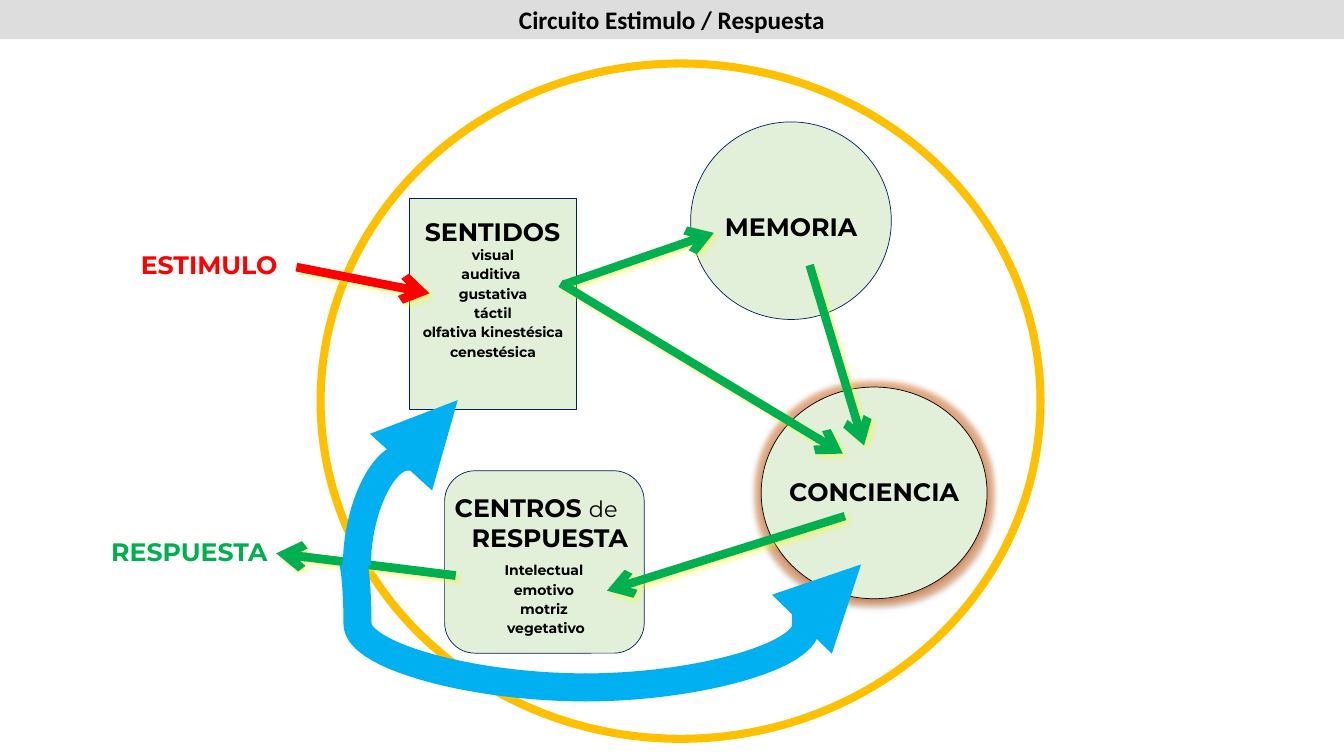
from pptx import Presentation
from pptx.dml.color import RGBColor
from pptx.enum.shapes import MSO_CONNECTOR as Link, MSO_SHAPE as Form
from pptx.enum.text import MSO_ANCHOR as Anchor, PP_ALIGN as Align
from pptx.oxml import parse_xml
from pptx.oxml.ns import nsdecls
from pptx.util import Inches, Pt

BLACK = RGBColor(0x00, 0x00, 0x00)
NAVY = RGBColor(0x00, 0x20, 0x60)
GOLD = RGBColor(0xFF, 0xC0, 0x00)
MINT = RGBColor(0xE2, 0xF0, 0xD9)
RED = RGBColor(0xFF, 0x00, 0x00)
GREEN = RGBColor(0x00, 0xB0, 0x50)
BLUE = RGBColor(0x00, 0xB0, 0xF0)
GRAY = RGBColor(0xDD, 0xDD, 0xDD)
YELLOW = RGBColor(0xFF, 0xFF, 0x00)
ORANGE = RGBColor(0xED, 0x7D, 0x31)


def tint(color, alpha):
    return f'<a:srgbClr val="{color}"><a:alpha val="{alpha * 1000}"/></a:srgbClr>'


def shade(color, alpha, blur, dist, angle):
    return (f'<a:outerShdw blurRad="{Pt(blur)}" dist="{Pt(dist)}" '
            f'dir="{angle * 60000}" algn="ctr" rotWithShape="0">'
            f'{tint(color, alpha)}</a:outerShdw>')


def glow(color, alpha, size):
    return f'<a:glow rad="{Pt(size)}">{tint(color, alpha)}</a:glow>'


def effects(inner=""):
    return parse_xml(f'<a:effectLst {nsdecls("a")}>{inner}</a:effectLst>')


def add_text(par, text, size=18, color=BLACK, bold=True, face="Montserrat"):
    """Add formatted text to a paragraph, one line for each newline."""
    for i, line in enumerate(text.split("\n")):
        if i:
            par.add_line_break()
        run = par.add_run()
        run.text = line
        font = run.font
        font.name, font.size, font.bold = face, Pt(size), bold
        font.color.rgb = color


class Board:
    def __init__(self, deck):
        self.slide = deck.slides.add_slide(deck.slide_layouts[6])
        self.shapes = self.slide.shapes
        self.halo = shade(YELLOW, 40, 4, 3, 45)

    def shape(self, form, box, fill=MINT, line=NAVY, width=0.5, effect=None):
        item = self.shapes.add_shape(form, *map(Inches, box))
        item.shadow.inherit = False
        if fill is None:
            item.fill.background()
        else:
            item.fill.solid()
            item.fill.fore_color.rgb = fill
        if line is None:
            item.line.fill.background()
        else:
            item.line.color.rgb = line
            item.line.width = Pt(width)
        if effect:
            props = item.element.spPr
            props.replace(props.find("{*}effectLst"), effects(effect))
        return item

    def label(self, box, text="", align=Align.CENTER, space=1.15, **style):
        frame = self.shapes.add_textbox(*map(Inches, box)).text_frame
        frame.word_wrap = True
        par = frame.paragraphs[0]
        par.alignment, par.line_spacing = align, space
        par.space_after = Pt(10)
        if text:
            add_text(par, text, **style)
        return par

    def link(self, start, end, color, width, head, kind, effect=""):
        item = self.shapes.add_connector(kind, *map(Inches, start + end))
        item.line.color.rgb = color
        item.line.width = Pt(width)
        if head:
            item.line._get_or_add_ln().append(
                parse_xml(f'<a:tailEnd {nsdecls("a")} type="{head}"/>'))
        item.element.spPr.append(effects(effect))
        return item

    def arrow(self, start, end, color=GREEN, width=6):
        self.link(start, end, color, width, "arrow", Link.STRAIGHT, self.halo)

    def curve(self, start, end, bend, head=None, turn=0):
        item = self.link(start, end, BLUE, 20, head, Link.CURVE)
        props = item.element.spPr
        if turn:
            props.find("{*}xfrm").set("rot", str(turn * 60000))
        guides = props.find("{*}prstGeom").get_or_add_avLst()
        guides.append(parse_xml(
            f'<a:gd {nsdecls("a")} name="adj1" fmla="val {round(bend * 100000)}"/>'))


def main():
    deck = Presentation()
    deck.slide_width, deck.slide_height = Inches(13.33), Inches(7.5)
    board = Board(deck)

    # Circuit parts
    board.shape(Form.RECTANGLE, (4.06, 1.97, 1.66, 2.09))
    board.shape(Form.OVAL, (3.18, 0.63, 7.14, 6.7), None, GOLD, 5.75)
    board.shape(Form.OVAL, (6.85, 1.21, 1.99, 1.96))
    board.shape(Form.OVAL, (7.55, 3.84, 2.24, 2.1), line=BLACK,
                effect=glow(ORANGE, 50, 8) + shade(BLACK, 38, 3.1, 1.6, 90))
    board.shape(Form.ROUNDED_RECTANGLE, (4.41, 4.67, 1.98, 1.81))

    # Names, the second line of the centres set in from the first
    par = board.label((4.41, 4.83, 1.98, 0.52), align=Align.LEFT, space=1.0)
    props = par._p.get_or_add_pPr()
    props.set("marL", str(Inches(0.17)))
    props.set("indent", str(Inches(-0.17)))
    add_text(par, "CENTROS ")
    add_text(par, "de", size=16, bold=False)
    add_text(par, "\nRESPUESTA")
    board.label((6.85, 2, 1.99, 0.28), "MEMORIA")
    board.label((4.05, 2.05, 1.67, 0.29), "SENTIDOS")
    board.label((7.55, 4.63, 2.24, 0.28), "CONCIENCIA")

    # Lists
    board.label((4.06, 2.37, 1.66, 1.52),
                "visual\nauditiva \ngustativa\ntáctil\n"
                "olfativa kinestésica cenestésica", size=10)
    board.label((4.53, 5.5, 1.77, 0.81),
                "Intelectual \nemotivo \nmotriz \nvegetativo", size=10)

    # Straight arrows
    board.arrow((2.94, 2.65), (4.26, 2.91), RED, 6.25)
    board.arrow((5.6, 2.82), (7.08, 2.31))
    board.arrow((5.56, 2.81), (8.36, 4.5))
    board.arrow((8.03, 2.63), (8.57, 4.42))
    board.arrow((8.38, 5.12), (6.02, 5.86))
    board.arrow((4.52, 5.71), (2.74, 5.49), width=6.25)

    # Input and output
    board.label((0.79, 5.23, 1.96, 0.63), "RESPUESTA", Align.RIGHT, color=GREEN)
    board.label((1.14, 2.38, 1.71, 0.63), "ESTIMULO", Align.RIGHT, color=RED)

    # Feedback loop
    board.curve((4.86, 5.29), (3.22, 4.29), 0.659, "triangle", 90)
    board.curve((5.8, 6.82), (8.54, 5.6), 0.801, "triangle")
    board.curve((3.49, 5.56), (5.81, 6.82), 0.024)

    # Title bar
    bar = board.shape(Form.RECTANGLE, (0, -0.01, 13.33, 0.4), GRAY, None)
    bar.text_frame.vertical_anchor = Anchor.MIDDLE
    title = bar.text_frame.paragraphs[0]
    title.alignment = Align.CENTER
    add_text(title, "Circuito Estimulo / Respuesta", face="Calibri")

    deck.save("out.pptx")


if __name__ == "__main__":
    main()
